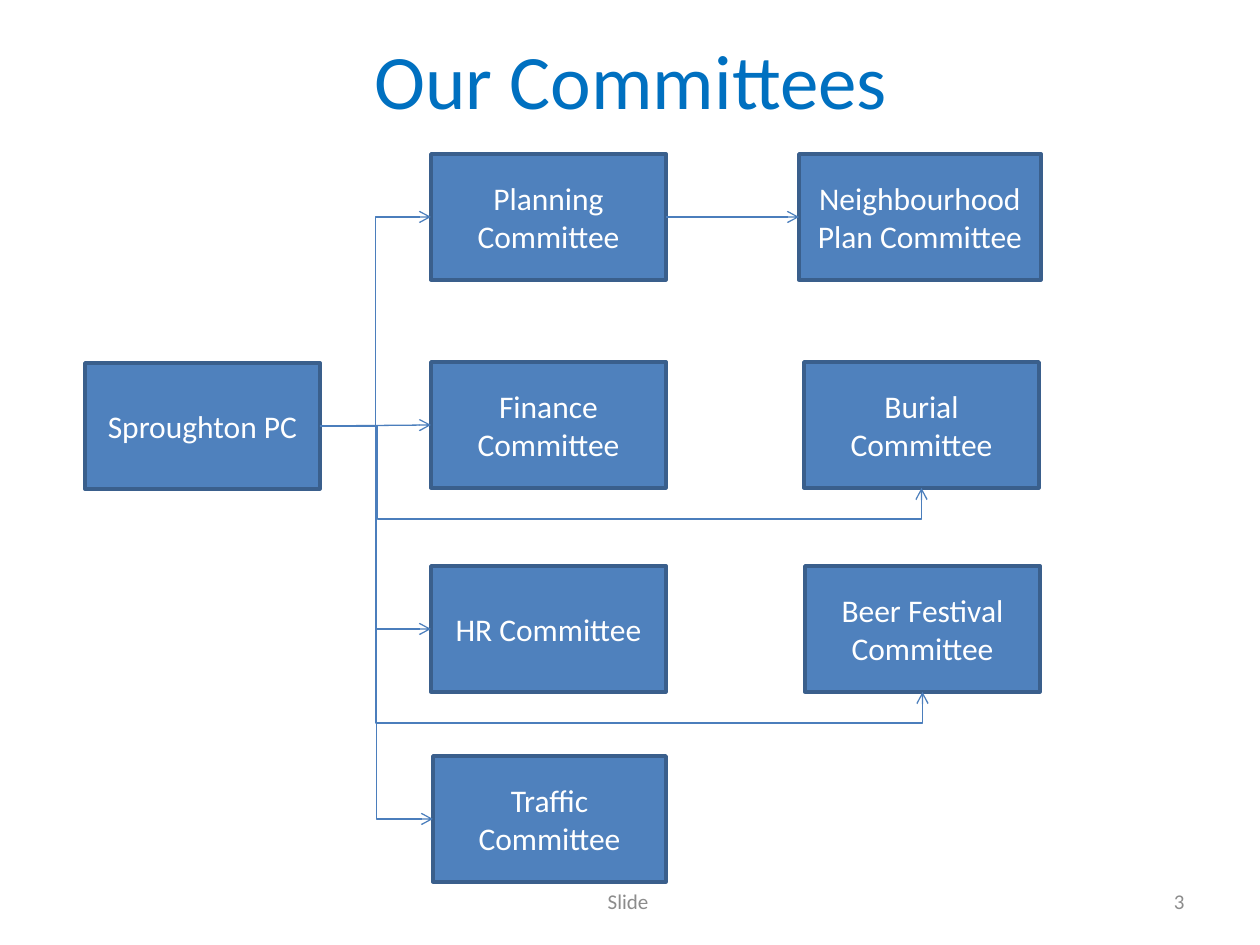
from lxml import etree
from pptx import Presentation
from pptx.dml.color import RGBColor
from pptx.enum.shapes import MSO_CONNECTOR, MSO_SHAPE
from pptx.enum.text import MSO_ANCHOR, PP_ALIGN
from pptx.oxml.ns import qn
from pptx.util import Pt

SCALE = 914400 / 126
RECTANGLE = MSO_SHAPE.RECTANGLE
STRAIGHT, ELBOW = MSO_CONNECTOR.STRAIGHT, MSO_CONNECTOR.ELBOW
CENTER, RIGHT = PP_ALIGN.CENTER, PP_ALIGN.RIGHT
MIDDLE = MSO_ANCHOR.MIDDLE
LEFT_SIDE, BOTTOM_SIDE, RIGHT_SIDE = 1, 2, 3
COLORS = {
    "title": "0070C0",
    "footer": "8C8C8C",
    "box": "4F81BD",
    "border": "3A5F8C",
    "arrow": "4B7EBC",
    "label": "FFFFFF",
}


def px(value):
    return round(value * SCALE)


def write(shape, text, size, color, align=CENTER):
    frame = shape.text_frame
    frame.word_wrap = True
    frame.vertical_anchor = MIDDLE
    para = frame.paragraphs[0]
    para.text = text
    para.alignment = align
    para.font.name = "Calibri"
    para.font.size = Pt(size)
    para.font.color.rgb = RGBColor.from_string(COLORS[color])


deck = Presentation()
deck.slide_width, deck.slide_height = px(1260), px(945)
page = deck.slides.add_slide(deck.slide_layouts[6])

# Title and footer: text, left, top, width, height, size, colour, alignment
texts = [
    ("Our Committees", 64, 0, 1134, 158, 44, "title", CENTER),
    ("3", 903, 876, 294, 50, 12, "footer", RIGHT),
    ("Slide ", 431, 876, 399, 50, 12, "footer", CENTER),
]
for text, left, top, width, height, size, color, align in texts:
    box = page.shapes.add_textbox(px(left), px(top), px(width), px(height))
    write(box, text, size, color, align)

# Organisation boxes: left, top, width
BOX_HEIGHT = 126
places = {
    "Sproughton PC": (85, 363, 235),
    "Planning Committee": (431, 154, 235),
    "Finance Committee": (431, 362, 235),
    "HR Committee": (431, 566, 235),
    "Traffic Committee": (433, 756, 233),
    "Neighbourhood Plan Committee": (799, 154, 242),
    "Burial Committee": (804, 362, 235),
    "Beer Festival Committee": (805, 566, 235),
}
boxes = {}
for name, (left, top, width) in places.items():
    box = page.shapes.add_shape(RECTANGLE, px(left), px(top), px(width), px(BOX_HEIGHT))
    box.shadow.inherit = False
    box.fill.solid()
    box.fill.fore_color.rgb = RGBColor.from_string(COLORS["box"])
    box.line.color.rgb = RGBColor.from_string(COLORS["border"])
    box.line.width = Pt(2)
    write(box, name, 18, "label")
    boxes[name] = box

# Arrows: start, end, kind, side reached, turning x for those that end from below
council = "Sproughton PC"
arrows = [
    (council, "Planning Committee", ELBOW, LEFT_SIDE, None),
    (council, "HR Committee", ELBOW, LEFT_SIDE, None),
    (council, "Finance Committee", STRAIGHT, LEFT_SIDE, None),
    ("Planning Committee", "Neighbourhood Plan Committee", ELBOW, LEFT_SIDE, None),
    (council, "Burial Committee", ELBOW, BOTTOM_SIDE, 378),
    (council, "Beer Festival Committee", ELBOW, BOTTOM_SIDE, 376),
    (council, "Traffic Committee", ELBOW, LEFT_SIDE, None),
]
DROP = 31
for start, end, kind, side, turn in arrows:
    arrow = page.shapes.add_connector(kind, 0, 0, 0, 0)
    arrow.begin_connect(boxes[start], RIGHT_SIDE)
    arrow.end_connect(boxes[end], side)
    arrow.line.color.rgb = RGBColor.from_string(COLORS["arrow"])
    arrow.line.width = Pt(0.75)
    etree.SubElement(arrow.line._get_or_add_ln(), qn("a:tailEnd"), type="arrow")
    properties = arrow._element.spPr
    etree.SubElement(properties, qn("a:effectLst"))
    if turn:
        geometry = properties.find(qn("a:prstGeom"))
        geometry.set("prst", "bentConnector4")
        guides = geometry.find(qn("a:avLst"))
        across = (px(turn) - arrow.begin_x) / arrow.width
        down = 1 + px(DROP) / arrow.height
        for guide, share in (("adj1", across), ("adj2", down)):
            etree.SubElement(guides, qn("a:gd"), name=guide, fmla=f"val {round(share * 100000)}")

deck.save("out.pptx")
